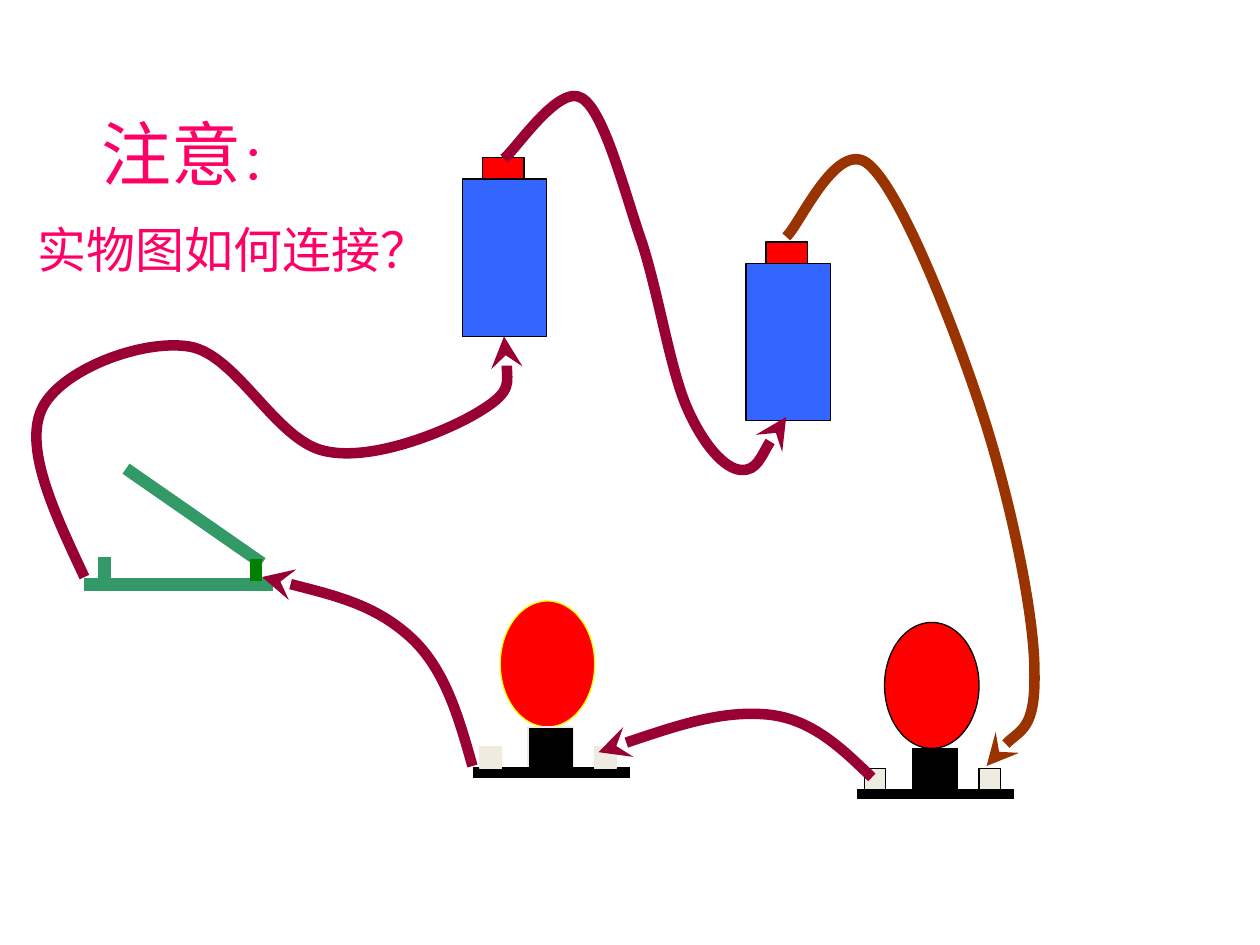
from pptx import Presentation
from pptx.dml.color import RGBColor
from pptx.enum import shapes as kinds, text as txt
from pptx.oxml.ns import qn
from pptx.util import Inches, Pt
from lxml import etree

# Content
# indent, space before, runs
NOTE = [
    (0.51, 0, [("注意", 40), ("：", 28)]),
    (0, 14, [("实物图如何连接？", 28)]),
]
BATTERIES = [(3.67, 1.25), (5.92, 1.92)]
# left, top, bulb outline, socket outline, terminal outline
LAMPS = [
    (3.75, 4.77, "FFFF00", "EEECE1", "EEECE1"),
    (6.80, 4.94, "000000", "000000", "000000"),
]
SWITCH = [
    ((0.67, 4.64), (2.17, 4.64), "339966"),
    ((1.00, 3.72), (2.08, 4.47), "339966"),
    ((0.83, 4.42), (0.83, 4.59), "339966"),
    ((2.03, 4.44), (2.03, 4.61), "008000"),
]
# Each wire: start point, then two control points and an end per curve
WIRES = [
    ("990033", [(4, 1.26), (4.1, 1.18), (4.44, 0.66), (4.62, 0.78),
                (4.8, 0.89), (4.96, 1.54), (5.1, 1.94),
                (5.23, 2.35), (5.32, 2.93), (5.45, 3.23),
                (5.58, 3.53), (5.75, 3.72), (5.88, 3.73),
                (6.01, 3.74), (6.16, 3.4), (6.24, 3.31)]),
    ("993300", [(6.24, 1.88), (6.35, 1.78), (6.65, 1.08), (6.9, 1.31),
                (7.16, 1.54), (7.57, 2.59), (7.79, 3.26),
                (8.01, 3.93), (8.21, 4.86), (8.21, 5.33),
                (8.22, 5.8), (7.91, 5.93), (7.83, 6.08)]),
    ("990033", [(6.92, 6.17), (6.68, 5.94), (6.44, 5.7), (6.08, 5.67),
                (5.72, 5.64), (5.24, 5.8), (4.75, 5.97)]),
    ("990033", [(3.75, 6.08), (3.64, 5.69), (3.53, 5.3), (3.25, 5.05),
                (2.97, 4.8), (2.53, 4.69), (2.08, 4.58)]),
    ("990033", [(0.67, 4.58), (0.43, 4.07), (0.19, 3.56), (0.33, 3.25),
                (0.47, 2.94), (1.12, 2.69), (1.5, 2.75),
                (1.88, 2.81), (2.19, 3.5), (2.58, 3.58),
                (2.97, 3.67), (3.6, 3.4), (3.83, 3.25),
                (4.07, 3.1), (4.03, 2.88), (4, 2.67)]),
]

RECT = kinds.MSO_SHAPE.RECTANGLE
OVAL = kinds.MSO_SHAPE.OVAL


def color(value):
    return RGBColor.from_string(value)


def set_line(part, outline, width):
    part.line.color.rgb = color(outline)
    part.line.width = Pt(width)


def add_part(group, kind, box, fill, outline):
    part = group.shapes.add_shape(kind, *map(Inches, box))
    part.shadow.inherit = False
    part.fill.solid()
    part.fill.fore_color.rgb = color(fill)
    set_line(part, outline, 0.75)


def add_bar(group, start, end, outline, width):
    bar = group.shapes.add_connector(
        kinds.MSO_CONNECTOR.STRAIGHT, *map(Inches, start + end))
    set_line(bar, outline, width)
    etree.SubElement(bar._element.spPr, qn("a:effectLst"))


def add_battery(slide, x, y):
    group = slide.shapes.add_group_shape()
    add_part(group, RECT, (x, y + 0.17, 0.67, 1.25), "3366FF", "000000")
    add_part(group, RECT, (x + 0.16, y, 0.33, 0.17), "FF0000", "000000")


def add_lamp(slide, x, y, bulb_line, socket_line, terminal_line):
    group = slide.shapes.add_group_shape()
    add_part(group, OVAL, (x + 0.22, y, 0.75, 1), "FF0000", bulb_line)
    add_part(group, RECT, (x + 0.44, y + 1, 0.36, 0.36), "000000", socket_line)
    add_bar(group, (x, y + 1.36), (x + 1.25, y + 1.36), "000000", 6)
    for offset in (0.06, 0.97):
        add_part(group, RECT, (x + offset, y + 1.16, 0.17, 0.17),
                 "EEECE1", terminal_line)


def add_wire(slide, outline, points):
    start, *rest = [(Inches(x), Inches(y)) for x, y in points]
    builder = slide.shapes.build_freeform(*start)
    builder.add_line_segments(rest, close=False)
    wire = builder.convert_to_shape()
    wire.shadow.inherit = False
    wire.fill.background()
    set_line(wire, outline, 6)
    etree.SubElement(wire.line._get_or_add_ln(), qn("a:tailEnd"), type="stealth")
    # Turn every three straight segments into one Bezier curve
    outline_path = next(wire._element.iter(qn("a:path")))
    segments = outline_path.findall(qn("a:lnTo"))
    for i in range(0, len(segments), 3):
        curve = etree.SubElement(outline_path, qn("a:cubicBezTo"))
        for segment in segments[i:i + 3]:
            curve.append(segment[0])
            outline_path.remove(segment)


def add_run(paragraph, words, size, fill="FF0066", font="Cabin"):
    run = paragraph.add_run()
    run.text = words
    run.font.size = Pt(size)
    run.font.name = font
    run.font.color.rgb = color(fill)


def add_note(slide, box, lines):
    frame = slide.shapes.add_textbox(*map(Inches, box)).text_frame
    frame.word_wrap = True
    frame.auto_size = txt.MSO_AUTO_SIZE.SHAPE_TO_FIT_TEXT
    for i, (indent, space, runs) in enumerate(lines):
        paragraph = frame.add_paragraph() if i else frame.paragraphs[0]
        paragraph.space_before = Pt(space)
        paragraph._p.get_or_add_pPr().set("indent", str(Inches(indent)))
        for words, size in runs:
            add_run(paragraph, words, size)


def main():
    deck = Presentation()
    deck.slide_width, deck.slide_height = Inches(10), Inches(7.5)
    slide = deck.slides.add_slide(deck.slide_layouts[6])

    # Circuit components
    for battery in BATTERIES:
        add_battery(slide, *battery)
    for lamp in LAMPS:
        add_lamp(slide, *lamp)
    switch = slide.shapes.add_group_shape()
    for start, end, outline in SWITCH:
        add_bar(switch, start, end, outline, 7)

    # Wires and question
    for outline, points in WIRES:
        add_wire(slide, outline, points)
    add_note(slide, (0.2, 0.83, 3.39, 1.47), NOTE)

    deck.save("out.pptx")


if __name__ == "__main__":
    main()
